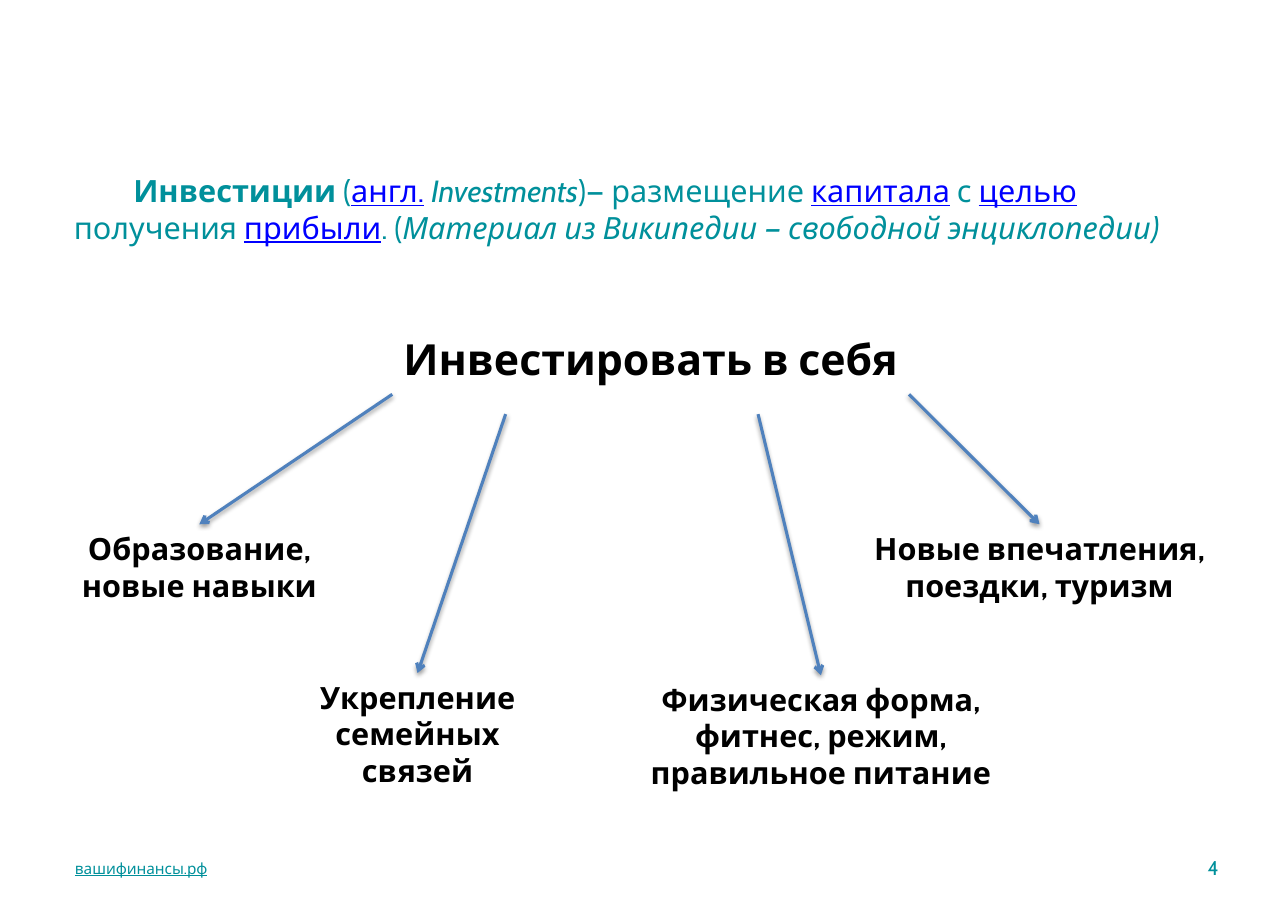
from dataclasses import dataclass

from lxml import etree
from pptx import Presentation
from pptx.dml.color import RGBColor
from pptx.enum.shapes import MSO_CONNECTOR
from pptx.enum.text import MSO_ANCHOR, MSO_AUTO_SIZE, PP_ALIGN
from pptx.oxml import parse_xml
from pptx.oxml.ns import nsdecls, qn
from pptx.util import Inches, Pt

FONT = "Cabin"
TEAL = RGBColor(0x00, 0x90, 0x9B)
LINK_BLUE = RGBColor(0x00, 0x00, 0xFF)
BLACK = RGBColor(0x00, 0x00, 0x00)
ARROW_BLUE = RGBColor(0x4F, 0x81, 0xBD)
WIDE_INSET = Inches(0.11)
FIRST_LINE_TAB = Inches(0.54)

DEFINITION = [
    ("\tИнвестиции ", "b"),
    ("(", ""),
    ("англ.", "link"),
    (" ", ""),
    ("Investments", "i"),
    (")— размещение ", ""),
    ("капитала", "link"),
    (" с ", ""),
    ("целью", "link"),
    (" получения ", ""),
    ("прибыли", "link"),
    (". (", ""),
    ("Материал из Википедии — свободной энциклопедии)", "i"),
]

BRANCHES = [
    ("Образование, новые навыки", (0, 41.92, 23.85, 18.03), (28.63, 14.29)),
    ("Укрепление семейных связей", (19.18, 73.54, 23.28, 26), (38.45, 18.5)),
    ("Физическая форма, фитнес, режим, правильное питание",
     (47.81, 74, 35.88, 26), (60.31, 18.5)),
    ("Новые впечатления, поездки, туризм",
     (69.37, 41.92, 30.63, 18.03), (73.38, 14.29)),
]


@dataclass
class Box:
    """A region whose inner boxes are given in percent of its size."""
    x: int
    y: int
    w: int
    h: int

    def point(self, px, py):
        """Return the point at the given percentages."""
        return int(self.x + self.w * px / 100), int(self.y + self.h * py / 100)

    def inner(self, px, py, pw, ph):
        """Return the inner box at the given percentages."""
        return Box(*self.point(px, py), int(self.w * pw / 100), int(self.h * ph / 100))


def style_run(r, size, color, bold=False):
    """Give a run its font, size, colour and weight."""
    r.font.name = FONT
    r.font.size = Pt(size)
    r.font.color.rgb = color
    r.font.bold = bold


def add_text(slide, box, text, size, color, bold=False, align=PP_ALIGN.LEFT):
    """Add a wrapping text box holding one paragraph."""
    sp = slide.shapes.add_textbox(box.x, box.y, box.w, box.h)
    tf = sp.text_frame
    tf.word_wrap = True
    p = tf.paragraphs[0]
    p.text = text
    p.alignment = align
    for r in p.runs:
        style_run(r, size, color, bold)
    return sp


def add_arrow(slide, start, target):
    """Draw a shadowed arrow from a point to the top of a target box."""
    line = slide.shapes.add_connector(MSO_CONNECTOR.STRAIGHT, *start, *start)
    line.end_connect(target, 0)
    line.line.color.rgb = ARROW_BLUE
    line.line.width = Pt(2)
    props = line._element.spPr
    etree.SubElement(props.get_or_add_ln(), qn("a:tailEnd"), type="arrow")
    props.append(parse_xml(
        f'<a:effectLst {nsdecls("a")}>'
        '<a:outerShdw blurRad="40000" dist="20000" dir="5400000" rotWithShape="0">'
        '<a:srgbClr val="000000"><a:alpha val="38000"/></a:srgbClr>'
        '</a:outerShdw></a:effectLst>'))


def add_definition(slide, box):
    """Write the definition with its linked terms and tabbed first line."""
    sp = add_text(slide, box, "", 20, TEAL)
    tf = sp.text_frame
    tf.margin_left = tf.margin_right = WIDE_INSET
    p = tf.paragraphs[0]
    tabs = etree.SubElement(p._p.get_or_add_pPr(), qn("a:tabLst"))
    etree.SubElement(tabs, qn("a:tab"), pos=str(int(FIRST_LINE_TAB)), algn="l")
    for text, kind in DEFINITION:
        r = p.add_run()
        r.text = text
        style_run(r, 20, LINK_BLUE if kind == "link" else TEAL, kind == "b")
        r.font.italic = kind == "i"
        r.font.underline = kind == "link"


def add_diagram(slide, box):
    """Place the heading and the four branches its arrows lead to."""
    heading = add_text(slide, box.inner(28.63, 0, 44.75, 13.35),
                       "Инвестировать в себя", 28, BLACK, True, PP_ALIGN.CENTER)
    heading.text_frame.word_wrap = False
    heading.text_frame.auto_size = MSO_AUTO_SIZE.SHAPE_TO_FIT_TEXT
    for text, place, start in BRANCHES:
        branch = add_text(slide, box.inner(*place), text, 20, BLACK, True, PP_ALIGN.CENTER)
        branch.text_frame.auto_size = MSO_AUTO_SIZE.SHAPE_TO_FIT_TEXT
        add_arrow(slide, box.point(*start), branch)


def add_footer(slide, box):
    """Place the site address on the left and the page number on the right."""
    site = add_text(slide, box.inner(0, 0, 37.45, 100), "вашифинансы.рф", 10, TEAL)
    site.text_frame.paragraphs[0].runs[0].font.underline = True
    number = add_text(slide, box.inner(91.79, 0, 8.21, 100), "4", 13, TEAL,
                      align=PP_ALIGN.RIGHT)
    for sp in (site, number):
        tf = sp.text_frame
        tf.vertical_anchor = MSO_ANCHOR.MIDDLE
        tf.margin_left = tf.margin_right = WIDE_INSET


def main():
    """Build the slide and save it."""
    prs = Presentation()
    prs.slide_width, prs.slide_height = Inches(11.69), Inches(8.27)
    slide = prs.slides.add_slide(prs.slide_layouts[6])
    page = Box(0, 0, prs.slide_width, prs.slide_height)
    add_definition(slide, page.inner(4.79, 18.26, 87, 13.18))
    add_diagram(slide, page.inner(4.79, 35.91, 89.65, 51.63))
    add_footer(slide, page.inner(4.88, 92.62, 90.68, 5.32))
    prs.save("out.pptx")


if __name__ == "__main__":
    main()
